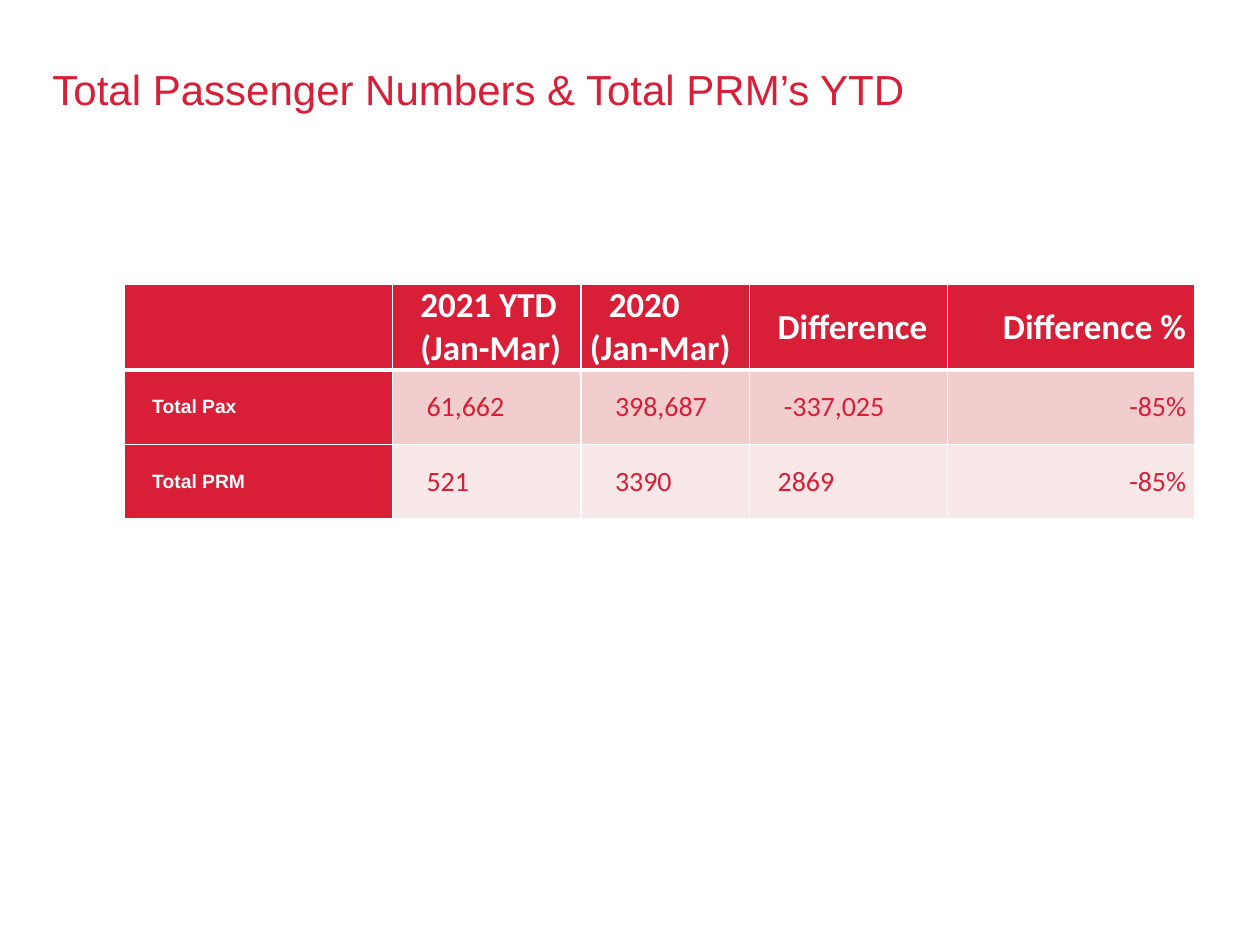
import dataclasses

import pptx
import pptx.dml.color
import pptx.enum.text
import pptx.oxml
import pptx.oxml.ns
import pptx.util

Pt = pptx.util.Pt
Align = pptx.enum.text.PP_ALIGN
Anchor = pptx.enum.text.MSO_ANCHOR


@dataclasses.dataclass(frozen=True)
class Style:
    font: str
    size: float
    color: str
    bold: bool = False


@dataclasses.dataclass(frozen=True)
class Theme:
    red: str = "D91E37"
    white: str = "FFFFFF"
    bands: tuple = ("F1CDCE", "F8E8E8")
    title: Style = Style("Arial", 24, "D91E37")
    heading: Style = Style("Calibri", 20, "FFFFFF", True)
    row_label: Style = Style("Arial", 11, "FFFFFF", True)
    figure: Style = Style("Calibri", 16, "D91E37")
    grid_line: float = 1
    heading_line: float = 3


THEME = Theme()

HEADINGS = ["", "2021 YTD\n(Jan-Mar)", "2020 (Jan-Mar)", "Difference", "Difference %"]
PASSENGER_ROWS = [
    ["Total Pax", " 61,662", " 398,687", " -337,025", "-85%"],
    ["Total PRM", " 521", " 3390", "2869", "-85%"],
]
COLUMN_WIDTHS = [153.2, 107.7, 96.5, 113, 141.6]
ROW_HEIGHTS = [48.4, 42.4, 42.4]


def rgb(color):
    return pptx.dml.color.RGBColor.from_string(color)


def add_run(paragraph, text, style):
    run = paragraph.add_run()
    run.text = text
    run.font.name = style.font
    run.font.size = Pt(style.size)
    run.font.bold = style.bold
    run.font.color.rgb = rgb(style.color)


def set_borders(cell, top, bottom):
    widths = {"lnL": THEME.grid_line, "lnR": THEME.grid_line, "lnT": top, "lnB": bottom}
    properties = cell._tc.get_or_add_tcPr()
    for position, (side, width) in enumerate(widths.items()):
        properties.insert(position, pptx.oxml.parse_xml(
            f'<a:{side} {pptx.oxml.ns.nsdecls("a")} w="{Pt(width)}">'
            f'<a:solidFill><a:srgbClr val="{THEME.white}"/></a:solidFill></a:{side}>'))


def fill_cell(cell, text, style, fill, align):
    cell.fill.solid()
    cell.fill.fore_color.rgb = rgb(fill)
    cell.vertical_anchor = Anchor.MIDDLE
    cell.margin_left = cell.margin_right = Pt(5.2)
    cell.margin_top = cell.margin_bottom = 0
    frame = cell.text_frame
    for index, line in enumerate(text.split("\n")):
        paragraph = frame.add_paragraph() if index else frame.paragraphs[0]
        paragraph.alignment = align
        properties = paragraph._p.get_or_add_pPr()
        properties.set("marL", "0")
        properties.set("indent", str(Pt(10.8)))
        if line:
            add_run(paragraph, line, style)


def place_title(slide, left, top, width, height):
    title = slide.shapes.title
    title.left, title.top, title.width, title.height = map(Pt, (left, top, width, height))
    frame = title.text_frame
    frame.margin_left = frame.margin_right = frame.margin_top = frame.margin_bottom = 0
    frame.vertical_anchor = Anchor.TOP
    frame.word_wrap = True
    frame.paragraphs[0].alignment = Align.LEFT
    add_run(frame.paragraphs[0], "Total Passenger Numbers & Total PRM’s YTD", THEME.title)


def place_passenger_table(slide, left, top, width, height):
    rows = [HEADINGS] + PASSENGER_ROWS
    table = slide.shapes.add_table(
        len(rows), len(HEADINGS), Pt(left), Pt(top), Pt(width), Pt(height)).table
    for column, share in zip(table.columns, COLUMN_WIDTHS):
        column.width = Pt(width * share / sum(COLUMN_WIDTHS))
    for row, share in zip(table.rows, ROW_HEIGHTS):
        row.height = Pt(height * share / sum(ROW_HEIGHTS))
    for r, texts in enumerate(rows):
        for c, text in enumerate(texts):
            if r == 0:
                style, fill = THEME.heading, THEME.red
            elif c == 0:
                style, fill = THEME.row_label, THEME.red
            else:
                style, fill = THEME.figure, THEME.bands[(r - 1) % 2]
            align = Align.RIGHT if c == len(texts) - 1 else Align.LEFT
            cell = table.cell(r, c)
            fill_cell(cell, text, style, fill, align)
            set_borders(cell,
                        THEME.heading_line if r == 1 else THEME.grid_line,
                        THEME.heading_line if r == 0 else THEME.grid_line)


def main():
    presentation = pptx.Presentation()
    presentation.slide_width, presentation.slide_height = Pt(720), Pt(540)
    slide = presentation.slides.add_slide(presentation.slide_layouts.get_by_name("Title Only"))
    place_title(slide, 30, 36, 660, 84)
    place_passenger_table(slide, 71, 162.5, 612, 133.2)
    presentation.save("out.pptx")


if __name__ == "__main__":
    main()
